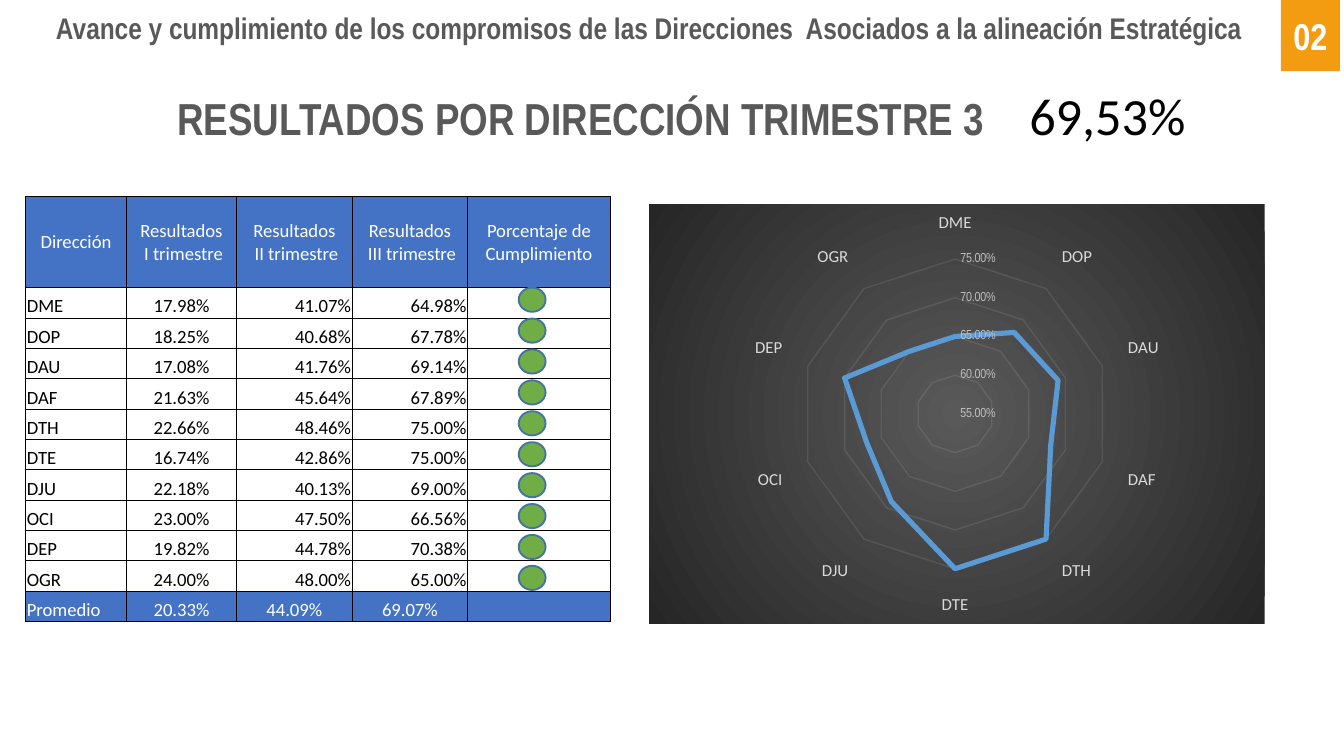
"""Build the slide with third-quarter results by direction."""
from lxml.etree import SubElement
from pptx import Presentation
from pptx.chart.data import CategoryChartData
from pptx.dml.color import RGBColor
from pptx.enum.chart import XL_CHART_TYPE, XL_MARKER_STYLE, XL_TICK_MARK
from pptx.enum.shapes import MSO_SHAPE
from pptx.enum.text import MSO_ANCHOR, PP_ALIGN
from pptx.oxml import parse_xml
from pptx.oxml.ns import nsdecls, qn
from pptx.util import Inches, Pt

COLORS = {
    "heading": "595959", "white": "FFFFFF", "black": "000000",
    "badge": "F39C12", "band": "4472C4", "dot": "70AD47",
    "dot_edge": "43739E", "curve": "5B9BD5", "grid": "F2F2F2",
    "category": "D9D9D9", "scale": "BFBFBF",
    "panel_center": "595959", "panel_edge": "262626",
}
HEADERS = ["Dirección", "Resultados\v I trimestre", "Resultados\v II trimestre",
           "Resultados\v III trimestre", "Porcentaje de Cumplimiento"]
RESULTS = [
    ("DME", 17.98, 41.07, 64.98), ("DOP", 18.25, 40.68, 67.78),
    ("DAU", 17.08, 41.76, 69.14), ("DAF", 21.63, 45.64, 67.89),
    ("DTH", 22.66, 48.46, 75.00), ("DTE", 16.74, 42.86, 75.00),
    ("DJU", 22.18, 40.13, 69.00), ("OCI", 23.00, 47.50, 66.56),
    ("DEP", 19.82, 44.78, 70.38), ("OGR", 24.00, 48.00, 65.00),
]
AVERAGE = ("Promedio", 20.33, 44.09, 69.07)
COLUMN_WIDTHS = [0.75, 0.82, 0.86, 0.86, 1.06]
HEADER_HEIGHT = 0.68
ROW_HEIGHT = 2.49 / 11
LEFT, CENTER, RIGHT = PP_ALIGN.LEFT, PP_ALIGN.CENTER, PP_ALIGN.RIGHT


def rgb(name):
    return RGBColor.from_string(COLORS[name])


def box(left, top, width, height):
    return [Inches(length) for length in (left, top, width, height)]


def style_font(font, size, color, face="Calibri", bold=False):
    font.size, font.name, font.bold = Pt(size), face, bold
    font.color.rgb = rgb(color)


def write(frame, text, align=LEFT, anchor=MSO_ANCHOR.TOP, margin=None,
          spacing=None, **font):
    frame.word_wrap = True
    frame.vertical_anchor = anchor
    if margin is not None:
        frame.margin_left = frame.margin_right = Inches(margin)
        frame.margin_top = frame.margin_bottom = Inches(margin)
    paragraph = frame.paragraphs[0]
    paragraph.text = text
    paragraph.alignment = align
    paragraph.line_spacing = spacing
    for run in paragraph.runs:
        style_font(run.font, **font)


def add_label(slide, place, text, **style):
    write(slide.shapes.add_textbox(*box(*place)).text_frame, text, **style)


def add_filled(slide, kind, place, fill, edge=None):
    shape = slide.shapes.add_shape(kind, *box(*place))
    shape.shadow.inherit = False
    shape.fill.solid()
    shape.fill.fore_color.rgb = rgb(fill)
    if edge:
        shape.line.color.rgb = rgb(edge)
        shape.line.width = Pt(1)
    else:
        shape.line.fill.background()
    return shape


def add_borders(cell):
    properties = cell._tc.get_or_add_tcPr()
    for position, side in enumerate(("lnL", "lnR", "lnT", "lnB")):
        properties.insert(position, parse_xml(
            f'<a:{side} {nsdecls("a")} w="{Pt(0.5)}"><a:solidFill>'
            f'<a:srgbClr val="{COLORS["black"]}"/></a:solidFill></a:{side}>'))


def fill_cell(cell, text, align, banded, anchor):
    cell.margin_left = cell.margin_right = cell.margin_top = Inches(0.01)
    cell.margin_bottom = 0
    cell.vertical_anchor = anchor
    if banded:
        cell.fill.solid()
        cell.fill.fore_color.rgb = rgb("band")
    else:
        cell.fill.background()
    add_borders(cell)
    paragraph = cell.text_frame.paragraphs[0]
    paragraph.text = text
    paragraph.alignment = align
    for run in paragraph.runs:
        style_font(run.font, 10, "white" if banded else "black")
    if not text:
        SubElement(paragraph._p, qn("a:endParaRPr")).set("sz", "1000")


def add_results_table(slide):
    rows = [HEADERS] + [
        [name, *(f"{value:.2f}%" for value in values), ""]
        for name, *values in RESULTS + [AVERAGE]]
    table = slide.shapes.add_table(
        len(rows), len(HEADERS), *box(0.19, 1.46, 4.35, 3.17)).table
    table.first_row = table.horz_banding = False
    for column, width in zip(table.columns, COLUMN_WIDTHS):
        column.width = Inches(width)
    last = len(rows) - 1
    for index, texts in enumerate(rows):
        table.rows[index].height = Inches(ROW_HEIGHT if index else HEADER_HEIGHT)
        if index == 0:
            aligns = [CENTER] * 5
        elif index == last:
            aligns = [LEFT] + [CENTER] * 4
        else:
            aligns = [LEFT, CENTER, RIGHT, RIGHT, CENTER]
        anchor = MSO_ANCHOR.BOTTOM if index else MSO_ANCHOR.MIDDLE
        for column, (text, align) in enumerate(zip(texts, aligns)):
            fill_cell(table.cell(index, column), text, align,
                      index in (0, last), anchor)


def add_status_dots(slide):
    for index in range(len(RESULTS)):
        add_filled(slide, MSO_SHAPE.OVAL,
                   (3.86, 2.14 + 0.23 * index, 0.2, 0.18), "dot", "dot_edge")


def style_line(line, color, width, opacity):
    line.color.rgb = rgb(color)
    line.width = Pt(width)
    for shade in line._ln.iter(qn("a:srgbClr")):
        SubElement(shade, qn("a:alpha")).set("val", str(opacity * 1000))


def add_panel_gradient(chart):
    chart._chartSpace.find(qn("c:chart")).addnext(parse_xml(
        f'<c:spPr {nsdecls("c", "a")}><a:gradFill><a:gsLst>'
        f'<a:gs pos="0"><a:srgbClr val="{COLORS["panel_center"]}"/></a:gs>'
        f'<a:gs pos="100000"><a:srgbClr val="{COLORS["panel_edge"]}"/></a:gs>'
        '</a:gsLst><a:path path="circle"><a:fillToRect l="50000" t="50000" '
        'r="50000" b="50000"/></a:path></a:gradFill>'
        '<a:ln><a:noFill/></a:ln></c:spPr>'))


def add_radar(slide):
    data = CategoryChartData(number_format="0.00%")
    data.categories = [row[0] for row in RESULTS]
    data.add_series("Series 1", [round(row[3] / 100, 2) for row in RESULTS])
    chart = slide.shapes.add_chart(
        XL_CHART_TYPE.RADAR, *box(4.83, 1.52, 4.58, 3.12), data).chart
    chart.has_title = chart.has_legend = False
    style_font(chart.font, 10, "black")
    add_panel_gradient(chart)
    chart.plots[0].vary_by_categories = False
    curve = chart.plots[0].series[0]
    curve.smooth = False
    curve.marker.style = XL_MARKER_STYLE.NONE
    curve.format.line.color.rgb = rgb("curve")
    curve.format.line.width = Pt(2.75)
    directions, scale = chart.category_axis, chart.value_axis
    for axis in (directions, scale):
        axis.major_tick_mark = axis.minor_tick_mark = XL_TICK_MARK.NONE
    directions.has_major_gridlines = False
    style_font(directions.tick_labels.font, 9, "category")
    style_line(directions.format.line, "grid", 1, 54)
    scale.minimum_scale, scale.maximum_scale, scale.major_unit = 0.55, 0.75, 0.05
    scale.has_major_gridlines = True
    style_line(scale.major_gridlines.format.line, "grid", 0.75, 10)
    scale.format.line.fill.background()
    style_font(scale.tick_labels.font, 7, "scale", "Arial Narrow")
    scale.tick_labels.number_format = "0.00%"
    scale.tick_labels.number_format_is_linked = False


def main():
    deck = Presentation()
    deck.slide_width, deck.slide_height = Inches(10), Inches(10 * 9 / 16)
    slide = deck.slides.add_slide(deck.slide_layouts[5])
    heading = dict(face="Arial Narrow", bold=True)
    title = slide.shapes.title
    title.left, title.top, title.width, title.height = box(1.22, 0.66, 7.51, 0.48)
    write(title.text_frame, "RESULTADOS POR DIRECCIÓN TRIMESTRE 3", spacing=0.9,
          anchor=MSO_ANCHOR.MIDDLE, size=24, color="heading", **heading)
    add_results_table(slide)
    add_label(slide, (0.19, 0.03, 9.28, 0.35),
              "Avance y cumplimiento de los compromisos de las Direcciones  "
              "Asociados a la alineación Estratégica", align=CENTER, margin=0.04,
              anchor=MSO_ANCHOR.BOTTOM, size=16, color="heading", **heading)
    badge = add_filled(slide, MSO_SHAPE.RECTANGLE, (9.53, 0, 0.44, 0.53), "badge")
    write(badge.text_frame, "02", align=CENTER, anchor=MSO_ANCHOR.MIDDLE,
          margin=0.04, size=20, color="white", **heading)
    add_label(slide, (7.56, 0.57, 1.51, 0.57), "69,53%", size=28, color="black")
    add_radar(slide)
    add_status_dots(slide)
    deck.save("out.pptx")


if __name__ == "__main__":
    main()
